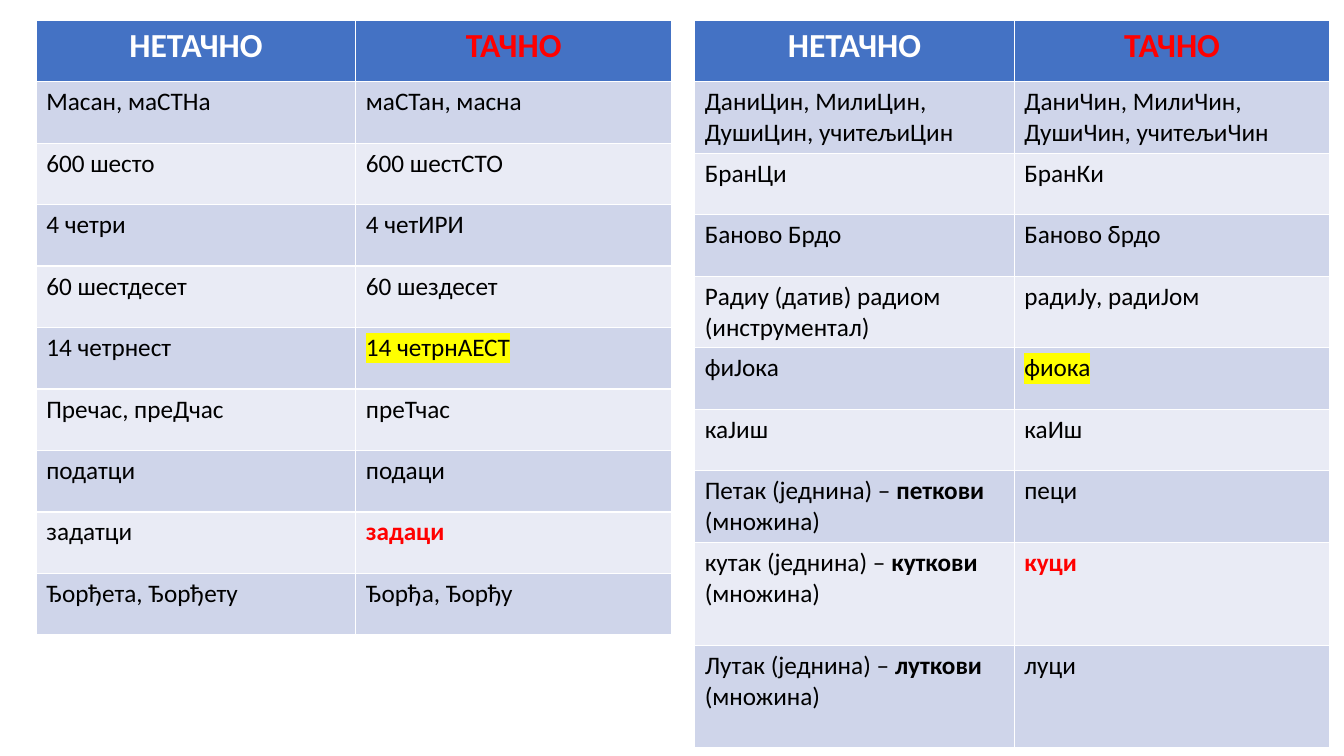
from dataclasses import dataclass

from lxml import etree
from pptx import Presentation
from pptx.dml.color import RGBColor
from pptx.enum import lang, text
from pptx.oxml import ns
from pptx.util import Inches, Pt


@dataclass(frozen=True)
class Theme:
    """Colours, font and type sizes."""
    font: str = "Calibri"
    head: str = "4472C4"
    bands: tuple = ("CFD5EA", "E9EBF5")
    white: str = "FFFFFF"
    black: str = "000000"
    red: str = "FF0000"
    mark: str = "FFFF00"
    big: int = 24
    body: int = 18


THEME = Theme()
TOP = 0.2
ROW = 0.61
COLS = (3.17, 3.13)
HEADS = ("НЕТАЧНО", "ТАЧНО")
RED = {"задаци", "куци"}
MARKED = {"14 четрнАЕСТ", "фиока"}
LEFT = [
    ("Масан, маСТНа", "маСТан, масна"),
    ("600 шесто", "600 шестСТО"),
    ("4 четри", "4 четИРИ"),
    ("60 шестдесет", "60 шездесет"),
    ("14 четрнест", "14 четрнАЕСТ"),
    ("Пречас, преДчас", "преТчас"),
    ("податци", "подаци"),
    ("задатци", "задаци"),
    ("Ђорђета, Ђорђету", "Ђорђа, Ђорђу"),
]
RIGHT = [
    ("ДаниЦин, МилиЦин, ДушиЦин, учитељиЦин",
     "ДаниЧин, МилиЧин, ДушиЧин, учитељиЧин"),
    ("БранЦи", "БранКи"),
    ("Баново Брдо", "Баново брдо"),
    ("Радиу (датив) радиом (инструментал)", "радиЈу, радиЈом"),
    ("фиЈока", "фиока"),
    ("каЈиш", "каИш"),
    ("Петак (једнина) – *петкови* (множина)", "пеци"),
    ("кутак (једнина) – *куткови* (множина)", "куци"),
    ("Лутак (једнина) – *луткови* (множина)", "луци"),
]


def style(run, size, color, bold):
    """Format one run."""
    font = run.font
    font.name, font.size, font.bold = THEME.font, Pt(size), bold
    font.color.rgb = RGBColor.from_string(color)
    font.language_id = lang.MSO_LANGUAGE_ID.SERBIAN_CYRILLIC


def mark(run):
    """Highlight a run that already has a colour."""
    light = etree.Element(ns.qn("a:highlight"))
    etree.SubElement(light, ns.qn("a:srgbClr"), val=THEME.mark)
    run.font.fill
    run._r.rPr.find(ns.qn("a:solidFill")).addnext(light)


def paint(cell, color):
    """Fill a cell with one colour."""
    cell.fill.solid()
    cell.fill.fore_color.rgb = RGBColor.from_string(color)


def add_head(cell, label, color):
    """Write a centred heading cell."""
    paint(cell, THEME.head)
    para = cell.text_frame.paragraphs[0]
    para.text = label
    para.alignment = text.PP_ALIGN.CENTER
    style(para.runs[0], THEME.big, color, True)


def add_word(cell, words, band):
    """Write a body cell, with the parts between asterisks in bold."""
    paint(cell, band)
    para = cell.text_frame.paragraphs[0]
    red = words in RED
    for i, part in enumerate(words.split("*")):
        run = para.add_run()
        run.text = part
        style(run, THEME.body, THEME.red if red else THEME.black,
              red or i % 2 == 1)
        if words in MARKED:
            mark(run)


def add_list(slide, left, pairs, sizes):
    """Add a table of wrong and right spellings."""
    frame = slide.shapes.add_table(
        len(pairs) + 1, len(COLS), Inches(left), Inches(TOP),
        Inches(sum(COLS)), Inches(sum(sizes)))
    table = frame.table
    for col, width in zip(table.columns, COLS):
        col.width = Inches(width)
    for row, size in zip(table.rows, sizes):
        row.height = Inches(size)
    for i, color in enumerate((THEME.white, THEME.red)):
        add_head(table.cell(0, i), HEADS[i], color)
    for r, pair in enumerate(pairs):
        for c, words in enumerate(pair):
            add_word(table.cell(r + 1, c), words, THEME.bands[r % 2])


def main():
    """Build the slide and save it."""
    deck = Presentation()
    deck.slide_width, deck.slide_height = Inches(13.33), Inches(7.5)
    slide = deck.slides.add_slide(deck.slide_layouts[6])
    tall, high = 0.7, 1.02
    add_list(slide, 0.36, LEFT, [ROW] * 10)
    add_list(slide, 6.89, RIGHT, [
        ROW, tall, ROW, ROW, tall, ROW, ROW, tall, high, high])
    deck.save("out.pptx")


if __name__ == "__main__":
    main()
